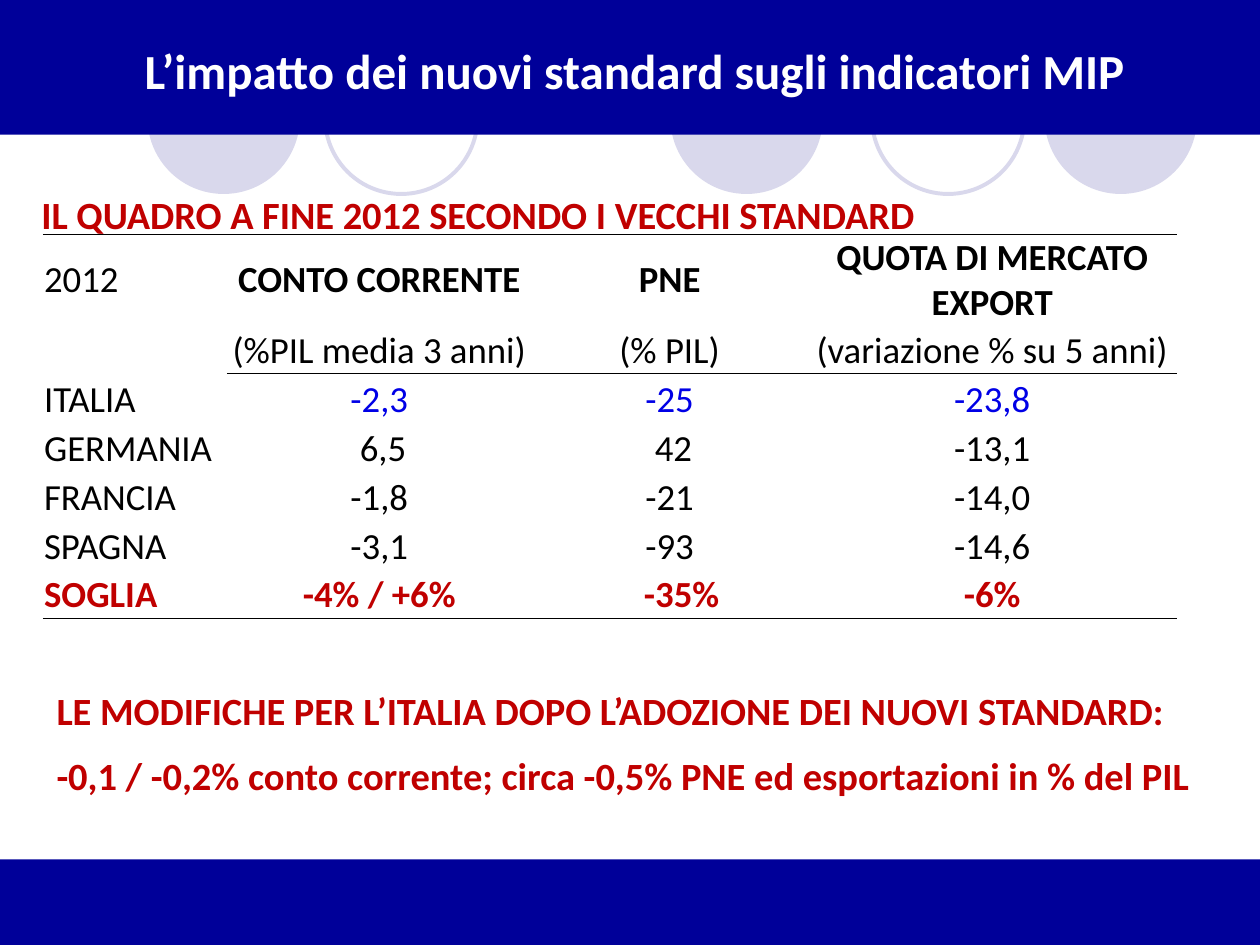
from lxml.etree import SubElement
from pptx import Presentation
from pptx.dml.color import RGBColor
from pptx.enum.shapes import MSO_SHAPE
from pptx.enum.text import MSO_ANCHOR, PP_ALIGN
from pptx.oxml import parse_xml
from pptx.oxml.ns import nsdecls, qn
from pptx.util import Inches, Pt

NAVY = RGBColor(0x00, 0x00, 0x99)
LILAC = RGBColor(0xD9, 0xD8, 0xEC)
RED = RGBColor(0xC0, 0x00, 0x00)
BLUE = RGBColor(0x00, 0x00, 0xE6)
BLACK = RGBColor(0x00, 0x00, 0x00)
WHITE = RGBColor(0xFF, 0xFF, 0xFF)
FONT = "Calibri"
NO_STYLE = "{2D5ABB26-0587-4C30-8999-92F81FD0307C}"

WIDTH, HEIGHT = 10, 7.5
HEADER_HEIGHT, FOOTER_HEIGHT = 1.07, 0.68
CIRCLE_SIZE, CIRCLE_TOP = 1.21, 0.33
CIRCLES = [(1.17, True), (2.58, False), (5.32, True), (6.92, False), (8.29, True)]

TITLE = "L’impatto dei nuovi standard sugli indicatori MIP"
HEADING = "IL QUADRO A FINE 2012 SECONDO I VECCHI STANDARD"
CHANGES = [
    "LE MODIFICHE PER L’ITALIA DOPO L’ADOZIONE DEI NUOVI STANDARD:",
    "-0,1 / -0,2% conto corrente; circa -0,5% PNE ed esportazioni in % del PIL",
]
ROWS = [
    ["2012", "CONTO CORRENTE", "PNE", "QUOTA DI MERCATO\vEXPORT"],
    ["", "(%PIL media 3 anni)", "(% PIL)", "(variazione % su 5 anni)"],
    ["ITALIA", "-2,3", "-25", "-23,8"],
    ["GERMANIA", "6,5", "42", "-13,1"],
    ["FRANCIA", "-1,8", "-21", "-14,0"],
    ["SPAGNA", "-3,1", "-93", "-14,6"],
    ["SOGLIA", "-4% / +6%", "-35%", "-6%"],
]
COLUMN_WIDTHS = [1.46, 2.42, 2.19, 2.93]
ROW_HEIGHTS = [0.71] + [0.39] * 6
HEADER, UNITS, ITALY, THRESHOLD = 0, 1, 2, 6
SIGN_OFFSETS = {(3, 1): 0.07, (3, 2): 0.07, (6, 2): 0.2}


def style_paragraph(paragraph, size, color, bold, alignment):
    paragraph.alignment = alignment
    font = paragraph.font
    font.name, font.size, font.bold = FONT, Pt(size), bold
    font.color.rgb = color


def add_shape(slide, kind, left, top, width, height, color, filled=True):
    shape = slide.shapes.add_shape(
        kind, Inches(left), Inches(top), Inches(width), Inches(height))
    shape.shadow.inherit = False
    if filled:
        shape.fill.solid()
        shape.fill.fore_color.rgb = color
        shape.line.fill.background()
    else:
        shape.fill.background()
        shape.line.color.rgb = color
        shape.line.width = Pt(2.25)


def add_text(slide, left, top, width, height, lines, size, color, alignment):
    box = slide.shapes.add_textbox(
        Inches(left), Inches(top), Inches(width), Inches(height))
    frame = box.text_frame
    frame.word_wrap = True
    frame.text = "\n".join(lines)
    for index, paragraph in enumerate(frame.paragraphs):
        style_paragraph(paragraph, size, color, True, alignment)
        if index:
            paragraph.space_before = Pt(size / 2)


def add_border(cell, side):
    line = parse_xml(f'<a:{side} {nsdecls("a")} w="{Pt(0.5)}"/>')
    fill = SubElement(line, qn("a:solidFill"))
    SubElement(fill, qn("a:srgbClr"), val=str(BLACK))
    cell._tc.get_or_add_tcPr().insert(0, line)


def style_cell(cell, row, column):
    cell.fill.background()
    cell.margin_left = Inches(SIGN_OFFSETS.get((row, column), 0.01))
    cell.margin_right = cell.margin_top = Inches(0.01)
    cell.margin_bottom = 0
    centred = row in (HEADER, THRESHOLD)
    cell.vertical_anchor = MSO_ANCHOR.MIDDLE if centred else MSO_ANCHOR.BOTTOM
    color = RED if row == THRESHOLD else BLUE if row == ITALY and column else BLACK
    bold = row == THRESHOLD or (row == HEADER and column > 0)
    alignment = PP_ALIGN.CENTER if column else PP_ALIGN.LEFT
    style_paragraph(cell.text_frame.paragraphs[0], 21, color, bold, alignment)
    if row == HEADER:
        add_border(cell, "lnT")
    elif row == THRESHOLD or (row == UNITS and column):
        add_border(cell, "lnB")


def add_indicator_table(slide):
    frame = slide.shapes.add_table(
        len(ROWS), len(COLUMN_WIDTHS), Inches(0.34), Inches(1.86),
        Inches(sum(COLUMN_WIDTHS)), Inches(sum(ROW_HEIGHTS)))
    table = frame.table
    table.first_row = table.horz_banding = False
    table._tbl.tblPr.find(qn("a:tableStyleId")).text = NO_STYLE
    for column, width in zip(table.columns, COLUMN_WIDTHS):
        column.width = Inches(width)
    for row, height in zip(table.rows, ROW_HEIGHTS):
        row.height = Inches(height)
    for row, texts in enumerate(ROWS):
        for column, text in enumerate(texts):
            cell = table.cell(row, column)
            cell.text = text
            style_cell(cell, row, column)


def main():
    presentation = Presentation()
    presentation.slide_width = Inches(WIDTH)
    presentation.slide_height = Inches(HEIGHT)
    slide = presentation.slides.add_slide(presentation.slide_layouts[6])

    for left, filled in CIRCLES:
        add_shape(slide, MSO_SHAPE.OVAL, left, CIRCLE_TOP,
                  CIRCLE_SIZE, CIRCLE_SIZE, LILAC, filled)
    for top, height in [(0, HEADER_HEIGHT), (HEIGHT - FOOTER_HEIGHT, FOOTER_HEIGHT)]:
        add_shape(slide, MSO_SHAPE.RECTANGLE, 0, top, WIDTH, height, NAVY)

    add_text(slide, 0.43, 0.27, 9.21, 0.75, [TITLE], 28, WHITE, PP_ALIGN.CENTER)
    add_indicator_table(slide)
    add_text(slide, 0.35, 5.4, 9.61, 1.02, CHANGES, 22, RED, PP_ALIGN.JUSTIFY)
    add_text(slide, 0.23, 1.47, 9.61, 0.51, [HEADING], 22, RED, PP_ALIGN.JUSTIFY)
    presentation.save("out.pptx")


if __name__ == "__main__":
    main()
